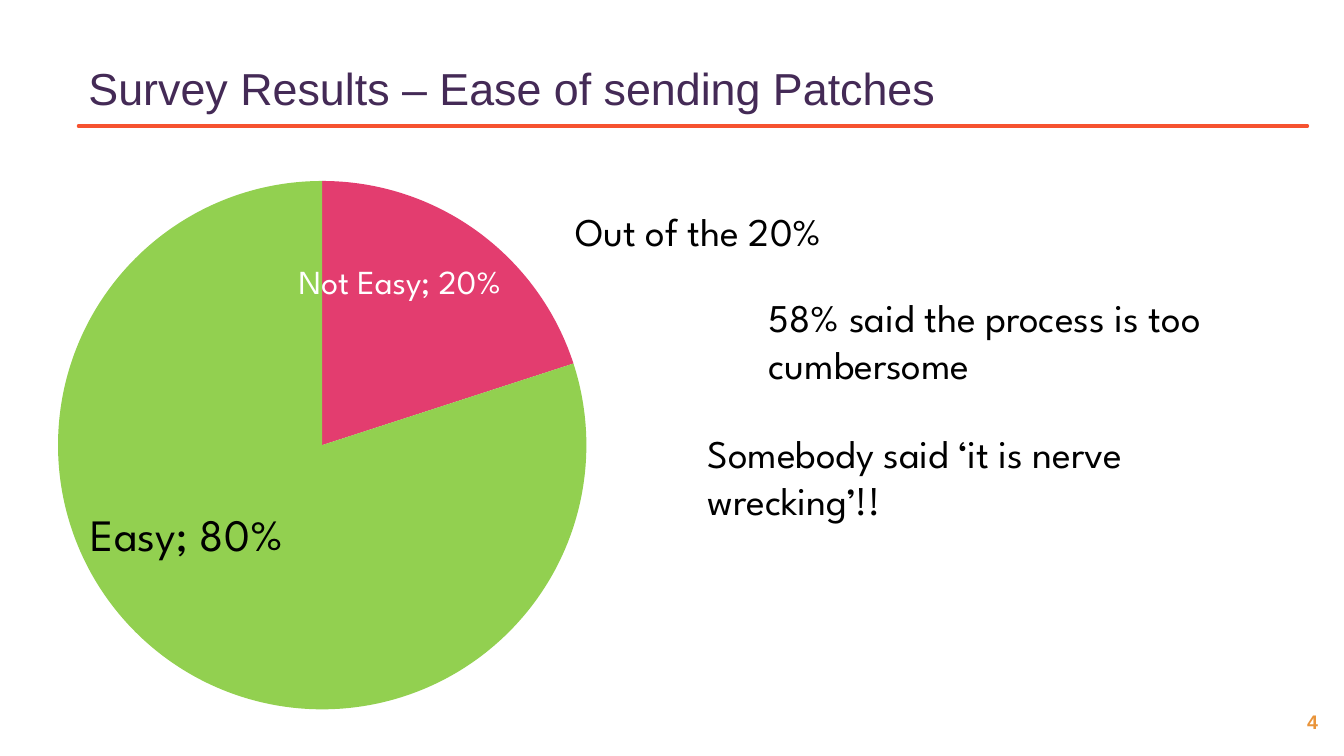
from lxml.etree import SubElement
from pptx import Presentation
from pptx.chart.data import CategoryChartData
from pptx.dml.color import RGBColor
from pptx.enum.chart import XL_CHART_TYPE, XL_LABEL_POSITION
from pptx.enum.shapes import MSO_CONNECTOR
from pptx.enum.text import MSO_ANCHOR, PP_ALIGN
from pptx.oxml import parse_xml
from pptx.oxml.ns import nsdecls, qn
from pptx.util import Pt

BODY_FONT = "League Spartan"
REMARKS = [
    ("Out of the 20%", (404, 144.5, 290, 41)),
    ("58% said the process is too cumbersome", (542, 206, 442, 75)),
    ("Somebody said ‘it is nerve wrecking’!!", (498.5, 303, 385, 75)),
]
SLICES = [
    ("Not Easy", 0.2, "E33D6F", 24, "FFFFFF", {"x": 0, "y": -0.087}),
    ("Easy", 0.8, "92D050", 32, "000000", {"x": -0.064, "y": -0.02}),
]


def color(value):
    """Turn a hex string into a colour."""
    return RGBColor.from_string(value)


def format_font(font, size, name, fill, bold=False):
    """Set the size, typeface, colour and weight of a font."""
    font.size, font.name, font.bold = Pt(size), name, bold
    font.color.rgb = color(fill)


def write_text(frame, text, size=28, name=BODY_FONT, fill="000000", bold=False,
               align=PP_ALIGN.LEFT, anchor=MSO_ANCHOR.TOP):
    """Write one formatted paragraph into a text frame."""
    frame.word_wrap = True
    frame.vertical_anchor = anchor
    para = frame.paragraphs[0]
    para.alignment = align
    span = para.add_run()
    span.text = text
    format_font(span.font, size, name, fill, bold)


def add_text(page, box, text, **style):
    """Add a text box that fills the given box."""
    shape = page.shapes.add_textbox(*map(Pt, box))
    write_text(shape.text_frame, text, **style)


def add_heading(page, box, text):
    """Place the title in the left part of the box and a rule below it."""
    left, top, width, height = box
    title = page.shapes.title
    title.left, title.top = Pt(left), Pt(top)
    title.width, title.height = Pt(622), Pt(height)
    write_text(title.text_frame, text, size=32, name="Arial", fill="442A56",
               anchor=MSO_ANCHOR.MIDDLE)
    bottom = Pt(top + height)
    rule = page.shapes.add_connector(
        MSO_CONNECTOR.STRAIGHT, Pt(left), bottom, Pt(left + width), bottom)
    rule.line.color.rgb = color("F65230")
    rule.line.width = Pt(2.25)
    rule.line._get_or_add_ln().set("cap", "rnd")
    SubElement(rule._element.spPr, qn("a:effectLst"))


def manual_layout(**settings):
    """Build a chart layout element from its settings."""
    parts = "".join(f'<c:{key} val="{value}"/>' for key, value in settings.items())
    return parse_xml(f'<c:layout {nsdecls("c")}><c:manualLayout>{parts}'
                     '</c:manualLayout></c:layout>')


def add_separator(labels):
    """Put a semicolon between category and value."""
    separator = parse_xml(f'<c:separator {nsdecls("c")}>; </c:separator>')
    labels.find(qn("c:showBubbleSize")).addnext(separator)


def add_pie(page, box):
    """Draw the survey pie with its labels in the box."""
    data = CategoryChartData(number_format="0%")
    data.categories = [row[0] for row in SLICES]
    data.add_series("Series 1", [row[1] for row in SLICES])
    chart = page.shapes.add_chart(XL_CHART_TYPE.PIE, *map(Pt, box), data).chart
    chart.has_legend = chart.has_title = False
    format_font(chart.font, 10, BODY_FONT, "000000")
    plot = chart.plots[0]
    plot.vary_by_categories = True
    series = plot.series[0]

    labels = series.data_labels
    labels.show_value = labels.show_category_name = True
    labels.show_percentage = labels.show_legend_key = False
    labels.number_format, labels.number_format_is_linked = "0%", False
    labels.position = XL_LABEL_POSITION.CENTER
    format_font(labels.font, 32, BODY_FONT, "000000")

    for index, (_, _, fill, size, ink, shift) in enumerate(SLICES):
        point = series.points[index]
        point.format.fill.solid()
        point.format.fill.fore_color.rgb = color(fill)
        point.format.line.fill.background()
        format_font(point.data_label.font, size, BODY_FONT, ink)
        point.data_label.position = XL_LABEL_POSITION.CENTER
        label = series._element.xpath("c:dLbls/c:dLbl")[index]
        label.find(qn("c:showCatName")).set("val", "1")
        label.find(qn("c:showPercent")).set("val", "0")
        label.find(qn("c:idx")).addnext(manual_layout(**shift))
        add_separator(label)
    add_separator(series._element.find(qn("c:dLbls")))

    area = plot._element.getparent()
    for layout in area.findall(qn("c:layout")):
        area.remove(layout)
    area.insert(0, manual_layout(layoutTarget="inner", xMode="edge", yMode="edge",
                                 x=0.16, y=0.092, w=0.59, h=0.884))


def build_survey_page(deck):
    """Add the survey results page to the deck."""
    page = deck.slides.add_slide(deck.slide_layouts[5])
    add_text(page, (915, 503.5, 45, 24.5), "4", size=14, name="Arial",
             fill="E9943A", bold=True, align=PP_ALIGN.CENTER)
    add_heading(page, (56, 34.5, 878, 55.5), "Survey Results – Ease of sending Patches")
    add_pie(page, (-61, 90, 640, 427))
    for text, box in REMARKS:
        add_text(page, box, text)


def main():
    """Build and save the deck."""
    deck = Presentation()
    deck.slide_width, deck.slide_height = Pt(960), Pt(540)
    build_survey_page(deck)
    deck.save("out.pptx")


if __name__ == "__main__":
    main()
